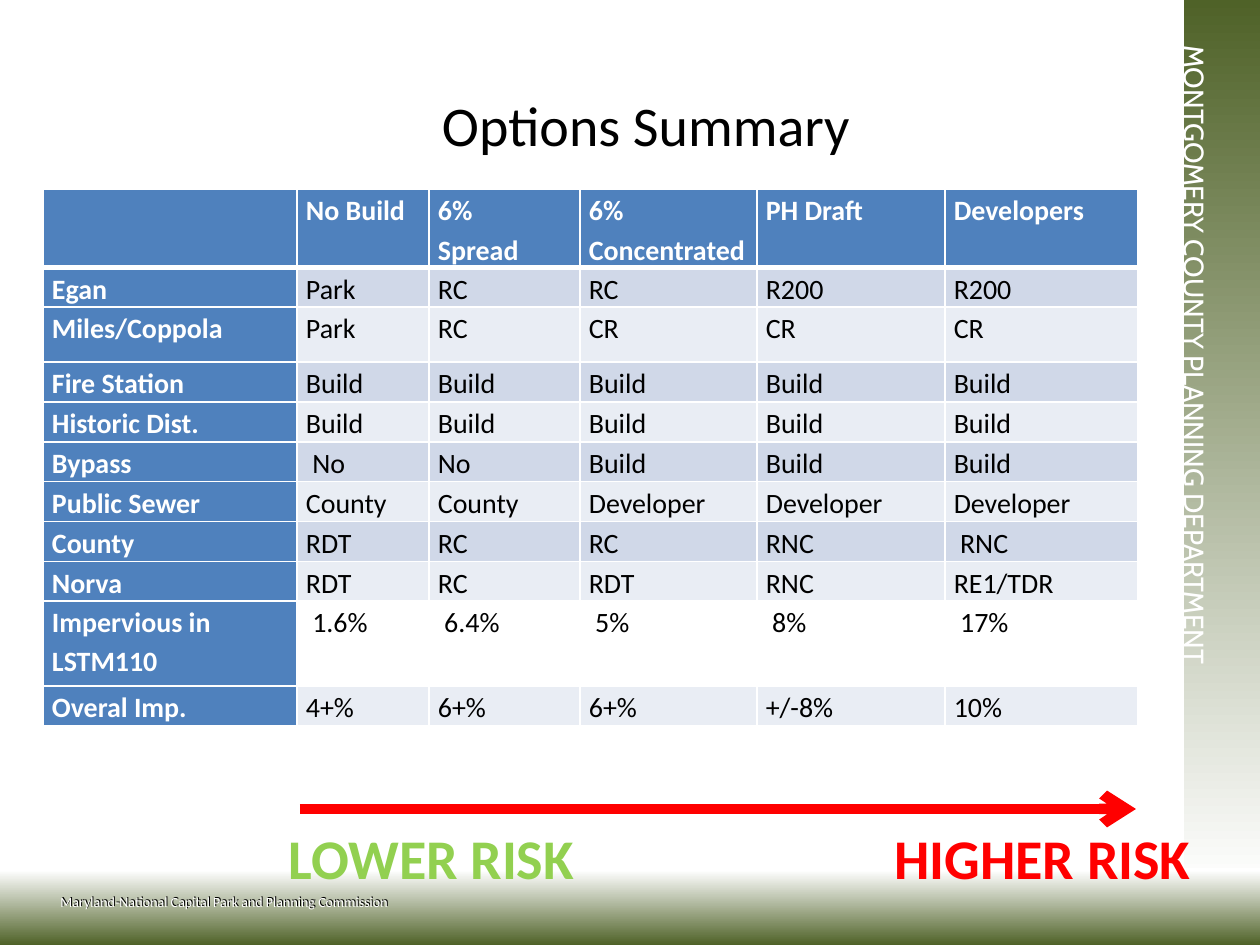
from dataclasses import dataclass

from lxml import etree
from pptx import Presentation
from pptx import util as u
from pptx.dml.color import RGBColor
from pptx.enum import shapes, text
from pptx.oxml.ns import qn

EMU_PER_PX = 914400 / 126


@dataclass(frozen=True)
class Theme:
    font: str = "Calibri"
    side_font: str = "Cabin"
    white: str = "FFFFFF"
    black: str = "000000"
    olive: str = "4F6228"
    blue: str = "4F81BD"
    band_dark: str = "D0D8E8"
    band_light: str = "E9EDF4"
    red: str = "FF0000"
    green: str = "92D050"
    heading_size: int = 32
    body_size: int = 16
    footer_size: int = 8


THEME = Theme()


@dataclass(frozen=True)
class Box:
    left: int
    top: int
    width: int
    height: int

    def emu(self) -> list[u.Emu]:
        return [px(v) for v in (self.left, self.top, self.width, self.height)]


@dataclass(frozen=True)
class Label:
    words: str
    box: Box
    size: int
    color: str
    bold: bool = False
    font: str = THEME.font
    rotation: int = 0
    centered: bool = False


@dataclass(frozen=True)
class Fade:
    box: Box
    angle: int
    end: float


@dataclass(frozen=True)
class Row:
    height: int
    cells: tuple[str, ...]
    fill: str | None


@dataclass(frozen=True)
class Arrow:
    start: tuple[int, int]
    end: tuple[int, int]
    color: str
    points: int


FADES = [
    Fade(Box(1184, 0, 76, 945), 270, 0.94),
    Fade(Box(0, 868, 1260, 77), 90, 0.97),
]
COMMISSION = "Maryland-National Capital Park and Planning Commission"
LABELS = [
    Label("MONTGOMERY COUNTY PLANNING DEPARTMENT", Box(799, 405, 791, 47),
          THEME.body_size, THEME.white, font=THEME.side_font, rotation=90),
    Label(COMMISSION, Box(49, 886, 536, 30), THEME.footer_size, THEME.black),
    Label(COMMISSION, Box(48, 887, 536, 30), THEME.footer_size, THEME.white),
    Label("HIGHER RISK", Box(882, 817, 412, 81), THEME.heading_size, THEME.red, bold=True),
    Label("LOWER RISK", Box(276, 817, 336, 81), THEME.heading_size, THEME.green, bold=True),
    Label("Options Summary", Box(74, 84, 1144, 73), THEME.heading_size, THEME.black,
          centered=True),
]
RISK_ARROW = Arrow((300, 809), (1136, 809), THEME.red, 6)
COLUMNS = (254, 132, 151, 177, 188, 193)
DARK, LIGHT = THEME.band_dark, THEME.band_light
ROWS = [
    Row(76, ("", "No Build", "6%\nSpread", "6% Concentrated", "PH Draft", "Developers"), THEME.blue),
    Row(39, ("Egan", "Park", "RC", "RC", "R200", "R200"), DARK),
    Row(55, ("Miles/Coppola", "Park", "RC", "CR", "CR", "CR"), LIGHT),
    Row(40, ("Fire Station",) + ("Build",) * 5, DARK),
    Row(40, ("Historic Dist.",) + ("Build",) * 5, LIGHT),
    Row(39, ("Bypass", " No", "No", "Build", "Build", "Build"), DARK),
    Row(40, ("Public Sewer", "County", "County", "Developer", "Developer", "Developer"), LIGHT),
    Row(40, ("County", "RDT", "RC", "RC", "RNC", " RNC"), DARK),
    Row(39, ("Norva", "RDT", "RC", "RDT", "RNC", "RE1/TDR"), LIGHT),
    Row(85, ("Impervious in LSTM110", " 1.6%", " 6.4%", " 5%", " 8%", " 17%"), None),
    Row(40, ("Overal Imp.", "4+%", "6+%", "6+%", "+/-8%", "10%"), LIGHT),
]


def px(value: int) -> u.Emu:
    return u.Emu(round(value * EMU_PER_PX))


def rgb(color: str) -> RGBColor:
    return RGBColor.from_string(color)


def style_runs(paragraph, size: int, color: str, bold: bool, font: str) -> None:
    for run in paragraph.runs:
        run.font.size = u.Pt(size)
        run.font.bold = bold
        run.font.name = font
        run.font.color.rgb = rgb(color)


def draw_fade(slide, fade: Fade) -> None:
    shape = slide.shapes.add_shape(shapes.MSO_SHAPE.RECTANGLE, *fade.box.emu())
    shape.shadow.inherit = False
    shape.line.fill.background()
    shape.fill.gradient()
    shape.fill.gradient_angle = fade.angle
    stops = ((THEME.olive, 0), (THEME.white, fade.end))
    for stop, (color, position) in zip(shape.fill.gradient_stops, stops):
        stop.color.rgb = rgb(color)
        stop.position = position


def draw_label(slide, label: Label) -> None:
    shape = slide.shapes.add_textbox(*label.box.emu())
    shape.rotation = label.rotation
    shape.text_frame.word_wrap = True
    shape.text_frame.text = label.words
    paragraph = shape.text_frame.paragraphs[0]
    if label.centered:
        paragraph.alignment = text.PP_ALIGN.CENTER
    style_runs(paragraph, label.size, label.color, label.bold, label.font)


def draw_arrow(slide, arrow: Arrow) -> None:
    points = [px(v) for v in arrow.start + arrow.end]
    connector = slide.shapes.add_connector(shapes.MSO_CONNECTOR.STRAIGHT, *points)
    connector.line.color.rgb = rgb(arrow.color)
    connector.line.width = u.Pt(arrow.points)
    etree.SubElement(connector.line._get_or_add_ln(), qn("a:tailEnd"), type="arrow")
    etree.SubElement(connector._element.spPr, qn("a:effectLst"))


def add_borders(cell, top: int, bottom: int) -> None:
    properties = cell._tc.get_or_add_tcPr()
    widths = {"lnL": 1, "lnR": 1, "lnT": top, "lnB": bottom}
    for index, (tag, points) in enumerate(widths.items()):
        line = etree.Element(qn(f"a:{tag}"), w=str(u.Pt(points)))
        fill = etree.SubElement(line, qn("a:solidFill"))
        etree.SubElement(fill, qn("a:srgbClr"), val=THEME.white)
        properties.insert(index, line)


def fill_cell(cell, words: str, fill: str | None, strong: bool) -> None:
    cell.margin_left = cell.margin_right = px(9)
    cell.margin_top = cell.margin_bottom = 0
    if fill:
        cell.fill.solid()
        cell.fill.fore_color.rgb = rgb(fill)
    else:
        cell.fill.background()
    cell.text_frame.text = words
    color = THEME.white if strong else THEME.black
    for paragraph in cell.text_frame.paragraphs:
        paragraph.line_spacing = 1.15
        style_runs(paragraph, THEME.body_size, color, strong, THEME.font)


def draw_table(slide) -> None:
    box = Box(43, 189, sum(COLUMNS), sum(row.height for row in ROWS))
    table = slide.shapes.add_table(len(ROWS), len(COLUMNS), *box.emu()).table
    for column, width in zip(table.columns, COLUMNS):
        column.width = px(width)
    for r, row in enumerate(ROWS):
        table.rows[r].height = px(row.height)
        for c, words in enumerate(row.cells):
            cell = table.cell(r, c)
            fill = THEME.blue if c == 0 else row.fill
            fill_cell(cell, words, fill, strong=r == 0 or c == 0)
            add_borders(cell, top=3 if r == 1 else 1, bottom=3 if r == 0 else 1)


def main() -> None:
    presentation = Presentation()
    presentation.slide_width, presentation.slide_height = px(1260), px(945)
    slide = presentation.slides.add_slide(presentation.slide_layouts[6])
    for fade in FADES:
        draw_fade(slide, fade)
    draw_table(slide)
    draw_arrow(slide, RISK_ARROW)
    for label in LABELS:
        draw_label(slide, label)
    presentation.save("out.pptx")


if __name__ == "__main__":
    main()
